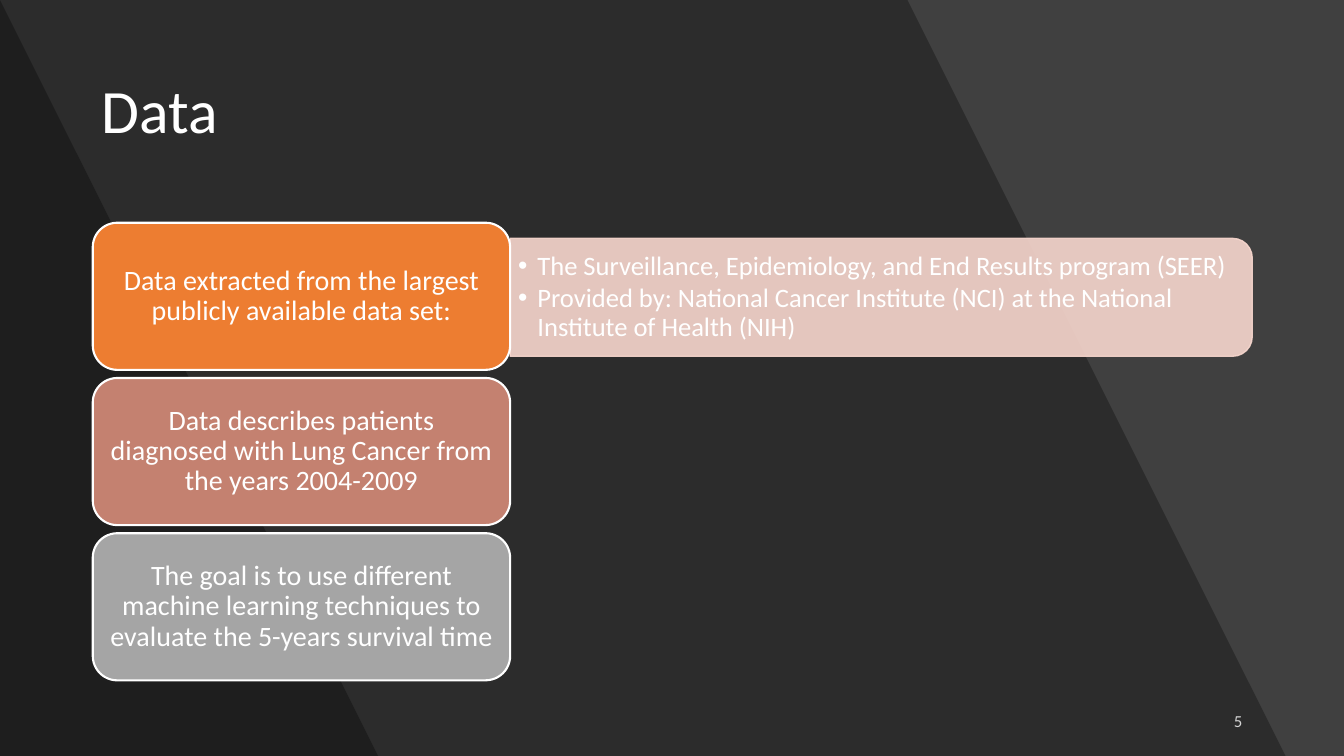
from lxml import etree
from pptx import Presentation
from pptx.dml.color import RGBColor
from pptx.enum.shapes import MSO_SHAPE
from pptx.enum.text import MSO_ANCHOR, MSO_AUTO_SIZE, PP_ALIGN
from pptx.oxml.ns import qn
from pptx.util import Inches, Pt

WHITE = RGBColor(0xFF, 0xFF, 0xFF)
BLACK = RGBColor(0x00, 0x00, 0x00)
CHARCOAL = RGBColor(0x40, 0x40, 0x40)
BLUSH = RGBColor(0xF8, 0xD7, 0xCE)
ORANGE = RGBColor(0xED, 0x7D, 0x31)
CLAY = RGBColor(0xC4, 0x81, 0x70)
GRAY = RGBColor(0xA5, 0xA5, 0xA5)
LEFT, CENTER, RIGHT = PP_ALIGN.LEFT, PP_ALIGN.CENTER, PP_ALIGN.RIGHT
MIDDLE = MSO_ANCHOR.MIDDLE
NO_AUTOFIT = MSO_AUTO_SIZE.NONE
ROUNDED, ROUNDED_TOP = MSO_SHAPE.ROUNDED_RECTANGLE, MSO_SHAPE.ROUND_2_SAME_RECTANGLE

WIDTH, HEIGHT = 13.33, 7.5
CARD_LEFT, CARD_TOP, CARD_WIDTH, CARD_HEIGHT = 0.92, 2.21, 4.14, 1.46
CARD_PITCH = 1.54
BAR_LENGTH, BAR_HEIGHT = 7.36, 1.17


def write_text(shape, lines, size, align=LEFT, spacing=0.9, after=0, margins=(0.1, 0.05), bullet=None):
    frame = shape.text_frame
    frame.word_wrap = True
    frame.auto_size = NO_AUTOFIT
    frame.vertical_anchor = MIDDLE
    frame.margin_left = frame.margin_right = Inches(margins[0])
    frame.margin_top = frame.margin_bottom = Inches(margins[1])
    frame.text = "\n".join(lines)
    for paragraph in frame.paragraphs:
        paragraph.alignment = align
        paragraph.line_spacing = spacing
        paragraph.space_before = Pt(0)
        paragraph.space_after = Pt(after)
        font = paragraph.runs[0].font
        font.name, font.size, font.color.rgb = "Calibri", Pt(size), WHITE
        if bullet:
            properties = paragraph._p.get_or_add_pPr()
            properties.set("marL", str(Inches(0.19)))
            properties.set("indent", str(Inches(-0.19)))
            etree.SubElement(properties, qn("a:buChar"), char=bullet)


def set_opacity(shape, percent):
    for color in shape.element.iter(qn("a:srgbClr")):
        etree.SubElement(color, qn("a:alpha"), val=str(percent * 1000))


presentation = Presentation()
presentation.slide_width, presentation.slide_height = Inches(WIDTH), Inches(HEIGHT)
slide = presentation.slides.add_slide(presentation.slide_layouts[1])
shapes = slide.shapes
title, details = shapes.title, slide.placeholders[1]

# Background with two slanted dark bands
slide.background.fill.solid()
slide.background.fill.fore_color.rgb = CHARCOAL
for top_edge, bottom_edge in ((9.42, 12.89), (0.44, 3.92)):
    builder = shapes.build_freeform(0, 0, scale=Inches(1))
    builder.add_line_segments([(top_edge, 0), (bottom_edge, HEIGHT), (0, HEIGHT)], close=True)
    band = builder.convert_to_shape()
    band.shadow.inherit = False
    band.fill.solid()
    band.fill.fore_color.rgb = BLACK
    band.line.fill.background()
    set_opacity(band, 30)

# Title, brought in front of the bands
title.left, title.top, title.width, title.height = map(Inches, (0.91, 0.4, 11.51, 1.45))
write_text(title, ["Data"], 44)
shapes.element.append(title.element)

# Slide number
number = shapes.add_textbox(Inches(9.42), Inches(6.95), Inches(3), Inches(0.4))
write_text(number, ["5"], 12, align=RIGHT, spacing=1, after=6)
set_opacity(number, 80)

# Detail bar: a quarter turn puts the rounded corners on the right
bar_center_x = CARD_LEFT + CARD_WIDTH + BAR_LENGTH / 2
bar_center_y = CARD_TOP + CARD_HEIGHT / 2 + 0.01
bar = shapes.add_shape(ROUNDED_TOP, Inches(bar_center_x - BAR_HEIGHT / 2),
                       Inches(bar_center_y - BAR_LENGTH / 2), Inches(BAR_HEIGHT), Inches(BAR_LENGTH))
bar.rotation = 90
bar.shadow.inherit = False
bar.fill.solid()
bar.fill.fore_color.rgb = bar.line.color.rgb = BLUSH
bar.line.width = Pt(1)
set_opacity(bar, 90)

# Bulleted list, brought in front of the bar
details.left, details.top, details.width, details.height = map(Inches, (5.06, 2.42, 7.3, 1.06))
write_text(details, [
    "The Surveillance, Epidemiology, and End Results program (SEER)",
    "Provided by: National Cancer Institute (NCI) at the National Institute of Health (NIH)",
], 19, after=2.85, margins=(0.08, 0.04), bullet="•")
shapes.element.append(details.element)

# Column of cards
cards = (
    ("Data extracted from the largest publicly available data set:", ORANGE),
    ("Data describes patients diagnosed with Lung Cancer from the years 2004-2009", CLAY),
    ("The goal is to use different machine learning techniques to evaluate the 5-years survival time", GRAY),
)
for row, (message, color) in enumerate(cards):
    card = shapes.add_shape(ROUNDED, Inches(CARD_LEFT), Inches(CARD_TOP + row * CARD_PITCH),
                            Inches(CARD_WIDTH), Inches(CARD_HEIGHT))
    card.shadow.inherit = False
    card.fill.solid()
    card.fill.fore_color.rgb = color
    card.line.color.rgb = WHITE
    card.line.width = Pt(1.5)
    write_text(card, [message], 20, align=CENTER, margins=(0.08, 0.04))

presentation.save("out.pptx")
